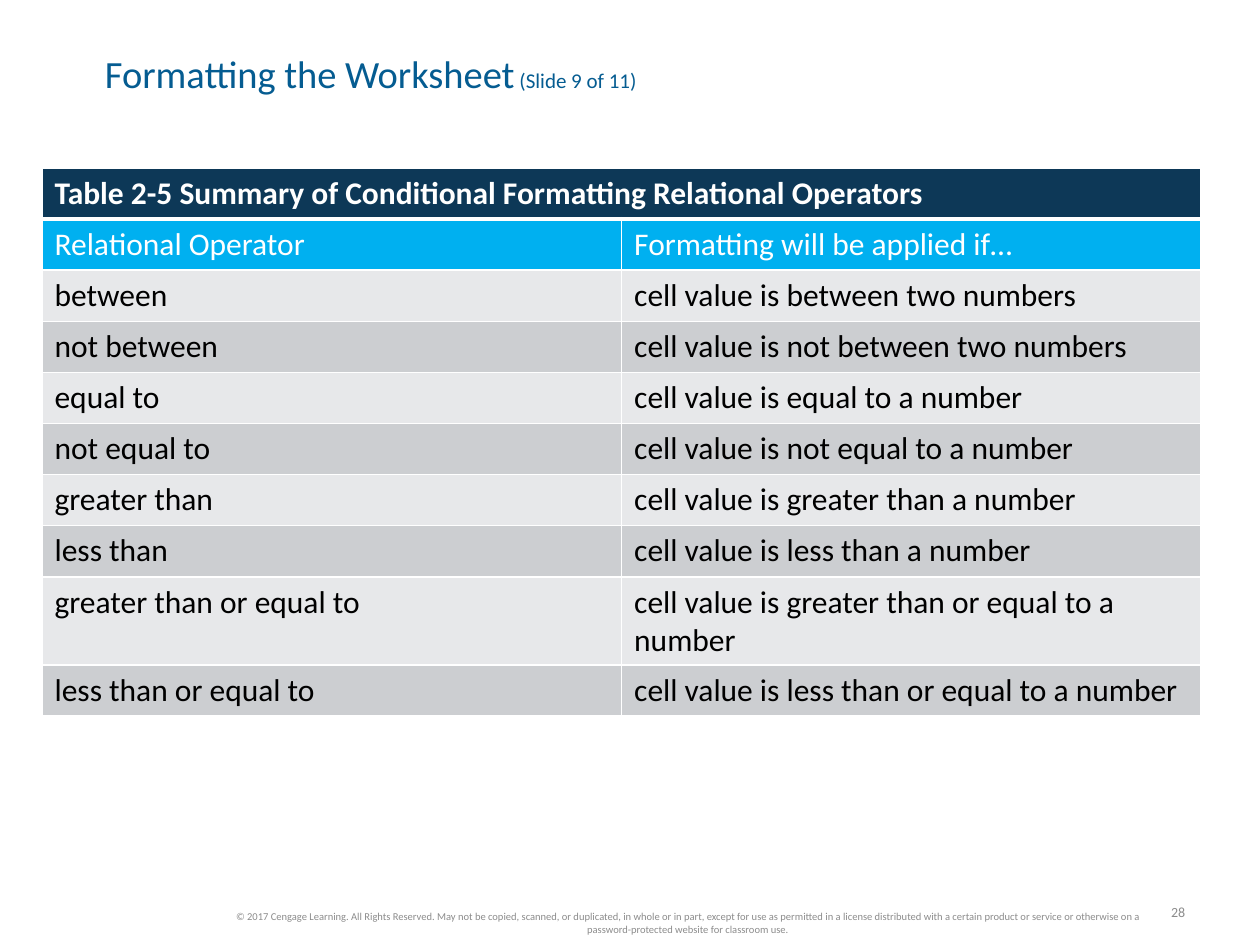
from lxml.etree import SubElement
from pptx import Presentation
from pptx.dml.color import RGBColor
from pptx.enum.text import MSO_ANCHOR as Anchor, PP_ALIGN as Align
from pptx.oxml.ns import qn
from pptx.util import Pt

WHITE = RGBColor(0xFF, 0xFF, 0xFF)
BLACK = RGBColor(0, 0, 0)
TITLE_BLUE = RGBColor(0x05, 0x5C, 0x91)
NAVY = RGBColor(0x0D, 0x38, 0x57)
SKY = RGBColor(0x00, 0xB0, 0xF0)
LIGHT_GRAY = RGBColor(0xE7, 0xE8, 0xEA)
MID_GRAY = RGBColor(0xCC, 0xCE, 0xD1)
FOOTER_GRAY = RGBColor(0x8C, 0x8C, 0x8C)
FONT = "Calibri"

CAPTION = "Table 2-5 Summary of Conditional Formatting Relational Operators"
HEADINGS = ("Relational Operator", "Formatting will be applied if…")
OPERATORS = [
    ("between", "cell value is between two numbers"),
    ("not between", "cell value is not between two numbers"),
    ("equal to", "cell value is equal to a number"),
    ("not equal to", "cell value is not equal to a number"),
    ("greater than", "cell value is greater than a number"),
    ("less than", "cell value is less than a number"),
    ("greater than or equal to", "cell value is greater than or equal to a number"),
    ("less than or equal to", "cell value is less than or equal to a number"),
]
COPYRIGHT = (
    "© 2017 Cengage Learning. All Rights Reserved. May not be copied, scanned, "
    "or duplicated, in whole or in part, except for use as permitted in a license "
    "distributed with a certain product or service or otherwise on a "
    "password-protected website for classroom use."
)


def set_font(font, size, color, bold=False):
    font.name = FONT
    font.size = Pt(size)
    font.bold = bold
    font.color.rgb = color


def add_text(page, box, text, size, color, align, wrap=True):
    frame = page.shapes.add_textbox(*map(Pt, box)).text_frame
    frame.word_wrap = wrap
    frame.vertical_anchor = Anchor.MIDDLE
    para = frame.paragraphs[0]
    para.text = text
    para.alignment = align
    set_font(para.font, size, color)
    return frame


def add_title(page, box):
    frame = add_text(page, box, "Formatting the Worksheet", 22, TITLE_BLUE, Align.LEFT)
    frame.margin_left = frame.margin_right = frame.margin_top = frame.margin_bottom = 0
    para = frame.paragraphs[0]
    para.line_spacing = 0.85
    span = para.add_run()
    span.text = " (Slide 9 of 11)"
    span.font.size = Pt(12)


def set_borders(cell, top, bottom):
    properties = cell._tc.get_or_add_tcPr()
    for side, width in (("L", 1), ("R", 1), ("T", top), ("B", bottom)):
        line = SubElement(properties, qn(f"a:ln{side}"), w=str(Pt(width)))
        fill = SubElement(line, qn("a:solidFill"))
        SubElement(fill, qn("a:srgbClr"), val=str(WHITE))


def add_operator_table(page, box):
    rows = [(CAPTION, ""), HEADINGS] + OPERATORS
    table = page.shapes.add_table(len(rows), 2, *map(Pt, box)).table
    for column in table.columns:
        column.width = Pt(box[2] / 2)
    for index, texts in enumerate(rows):
        table.rows[index].height = Pt(29.2)
        if index < 2:
            fill, color = (NAVY, SKY)[index], WHITE
        else:
            fill, color = (LIGHT_GRAY, MID_GRAY)[index % 2], BLACK
        for column, text in enumerate(texts):
            cell = table.cell(index, column)
            set_borders(cell, 3 if index == 1 else 1, 3 if index == 0 else 1)
            cell.fill.solid()
            cell.fill.fore_color.rgb = fill
            para = cell.text_frame.paragraphs[0]
            para.text = text
            set_font(para.font, 18, color, bold=index == 0)
    table.cell(0, 0).merge(table.cell(0, 1))


def main():
    deck = Presentation()
    deck.slide_width, deck.slide_height = Pt(720), Pt(540)
    page = deck.slides.add_slide(deck.slide_layouts[6])
    add_text(page, (660, 512.5, 24.5, 17), "28", 8, FOOTER_GRAY, Align.RIGHT, wrap=False)
    add_operator_table(page, (24, 96, 662.4, 292))
    add_title(page, (60, 32.4, 632, 22.5))
    add_text(page, (126, 517.7, 534, 19.5), COPYRIGHT, 6, FOOTER_GRAY, Align.CENTER)
    deck.save("out.pptx")


if __name__ == "__main__":
    main()
